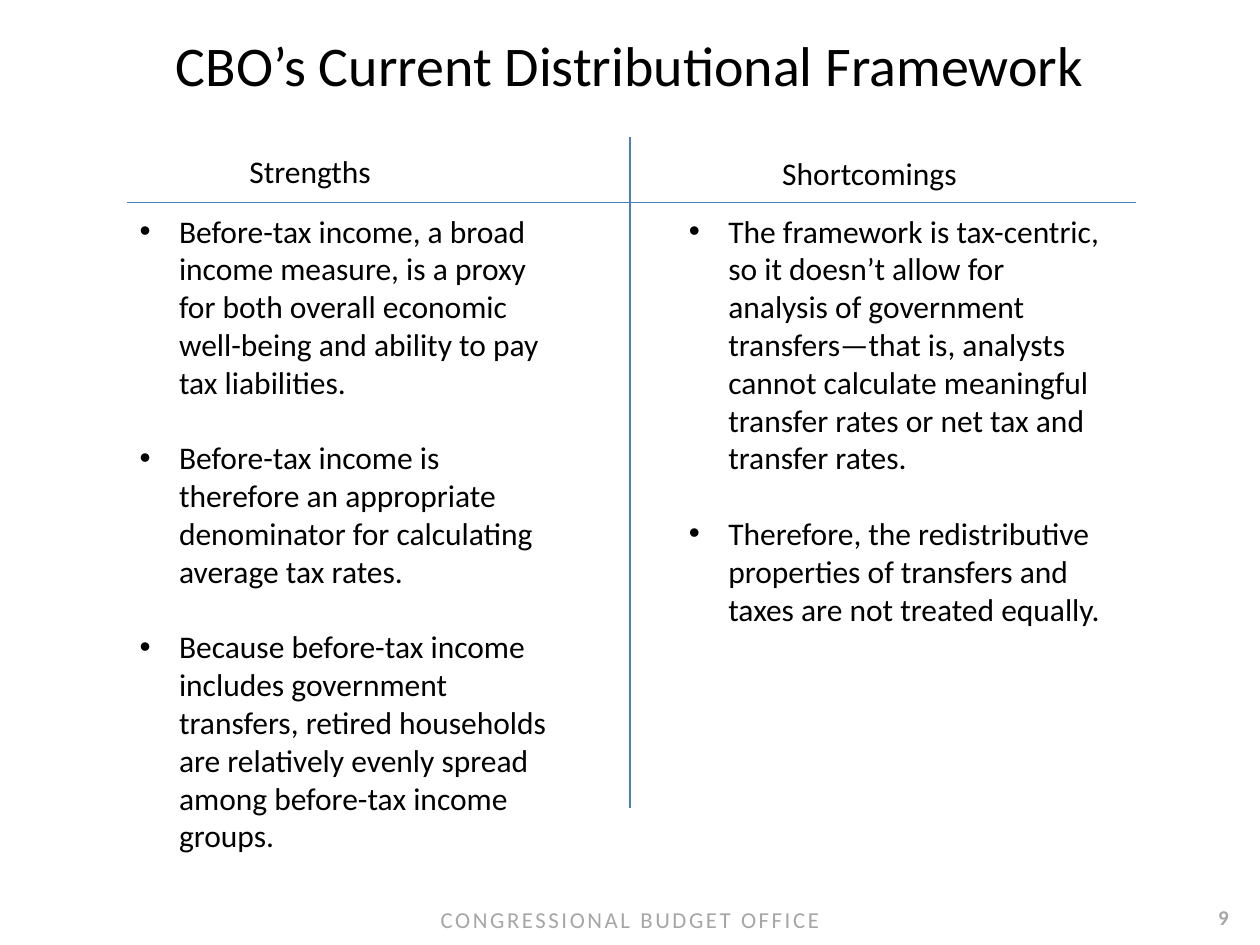
import pptx
import pptx.util
import pptx.dml.color
import pptx.enum.shapes
import pptx.enum.text
import pptx.oxml.ns
from lxml import etree

Pt = pptx.util.Pt
ALIGN = pptx.enum.text.PP_ALIGN
ANCHOR = pptx.enum.text.MSO_ANCHOR

# Content
TITLE = "CBO’s Current Distributional Framework"
FOOTER = "CONGRESSIONAL BUDGET OFFICE"
PAGE_NUMBER = "9"
COLUMNS = [
    {
        "heading": "Strengths",
        "heading_box": (135.4, 83.5, 85, 29),
        "left": 72.7,
        "points": [
            "Before-tax income, a broad income measure, is a proxy for both "
            "overall economic well-being and ability to pay tax liabilities.",
            "Before-tax income is therefore an appropriate denominator for "
            "calculating average tax rates.",
            "Because before-tax income includes government transfers, retired "
            "households are relatively evenly spread among before-tax income groups.",
        ],
    },
    {
        "heading": "Shortcomings",
        "heading_box": (439.9, 84.2, 115, 29),
        "left": 386.6,
        "points": [
            "The framework is tax-centric, so it doesn’t allow for analysis of "
            "government transfers—that is, analysts cannot calculate meaningful "
            "transfer rates or net tax and transfer rates.",
            "Therefore, the redistributive properties of transfers and taxes "
            "are not treated equally.",
        ],
    },
]

# Style
FONT = "Calibri"
COLORS = {"text": "000000", "footer": "A6A6A6", "rule": "4B7EBC"}
WIDTH, HEIGHT = 720, 540
BODY_SIZE = 18
BODY_TOP, BODY_WIDTH, BODY_HEIGHT = 117.4, 253.4, 378
INDENT = 22.5
POINT_GAP = 21.6
RULES = [((72.7, 115.9), (649.4, 115.9)), ((360, 78.5), (360, 461.5))]


def color(name):
    return pptx.dml.color.RGBColor.from_string(COLORS[name])


def add_text(page, frame, paragraphs, size, ink="text", align=ALIGN.LEFT,
             bold=False, wrap=True, bulleted=False):
    box = page.shapes.add_textbox(*(Pt(value) for value in frame))
    text = box.text_frame
    text.word_wrap = wrap
    for index, words in enumerate(paragraphs):
        para = text.paragraphs[0] if index == 0 else text.add_paragraph()
        para.add_run().text = words
        para.alignment = align
        if bulleted:
            add_bullet(para)
            if index:
                para.space_before = Pt(POINT_GAP)
        para.font.name = FONT
        para.font.size = Pt(size)
        para.font.bold = bold
        para.font.color.rgb = color(ink)
    return box


def add_bullet(para):
    props = para._p.get_or_add_pPr()
    props.set("marL", str(Pt(INDENT)))
    props.set("indent", str(-Pt(INDENT)))
    font = etree.SubElement(props, pptx.oxml.ns.qn("a:buFont"))
    font.set("typeface", "Arial")
    bullet = etree.SubElement(props, pptx.oxml.ns.qn("a:buChar"))
    bullet.set("char", "•")


def add_rule(page, start, end):
    rule = page.shapes.add_connector(
        pptx.enum.shapes.MSO_CONNECTOR.STRAIGHT,
        *(Pt(value) for value in start + end))
    rule.line.color.rgb = color("rule")
    rule.line.width = Pt(0.75)
    etree.SubElement(rule._element.spPr, pptx.oxml.ns.qn("a:effectLst"))


def main():
    deck = pptx.Presentation()
    deck.slide_width, deck.slide_height = Pt(WIDTH), Pt(HEIGHT)
    page = deck.slides.add_slide(deck.slide_layouts[6])

    # Page number and letter-spaced footer
    add_text(page, (678.2, 513.4, 41.8, 22.3), [PAGE_NUMBER], 12, "footer",
             ALIGN.CENTER, bold=True)
    footer = add_text(page, (0, 509.8, WIDTH, 27.4), [FOOTER], 13, "footer",
                      ALIGN.CENTER).text_frame
    footer.vertical_anchor = ANCHOR.MIDDLE
    footer.margin_top = Pt(7.2)
    span = footer.paragraphs[0].runs[0]
    span._r.get_or_add_rPr().set("spc", "150")

    # Title
    add_text(page, (0, 13.7, WIDTH, 46), [TITLE], 32, align=ALIGN.CENTER)

    # Dividing lines
    for start, end in RULES:
        add_rule(page, start, end)

    # Headings and their points
    for column in COLUMNS:
        add_text(page, column["heading_box"], [column["heading"]], BODY_SIZE,
                 wrap=False)
        add_text(page, (column["left"], BODY_TOP, BODY_WIDTH, BODY_HEIGHT),
                 column["points"], BODY_SIZE, bulleted=True)

    deck.save("out.pptx")


if __name__ == "__main__":
    main()
